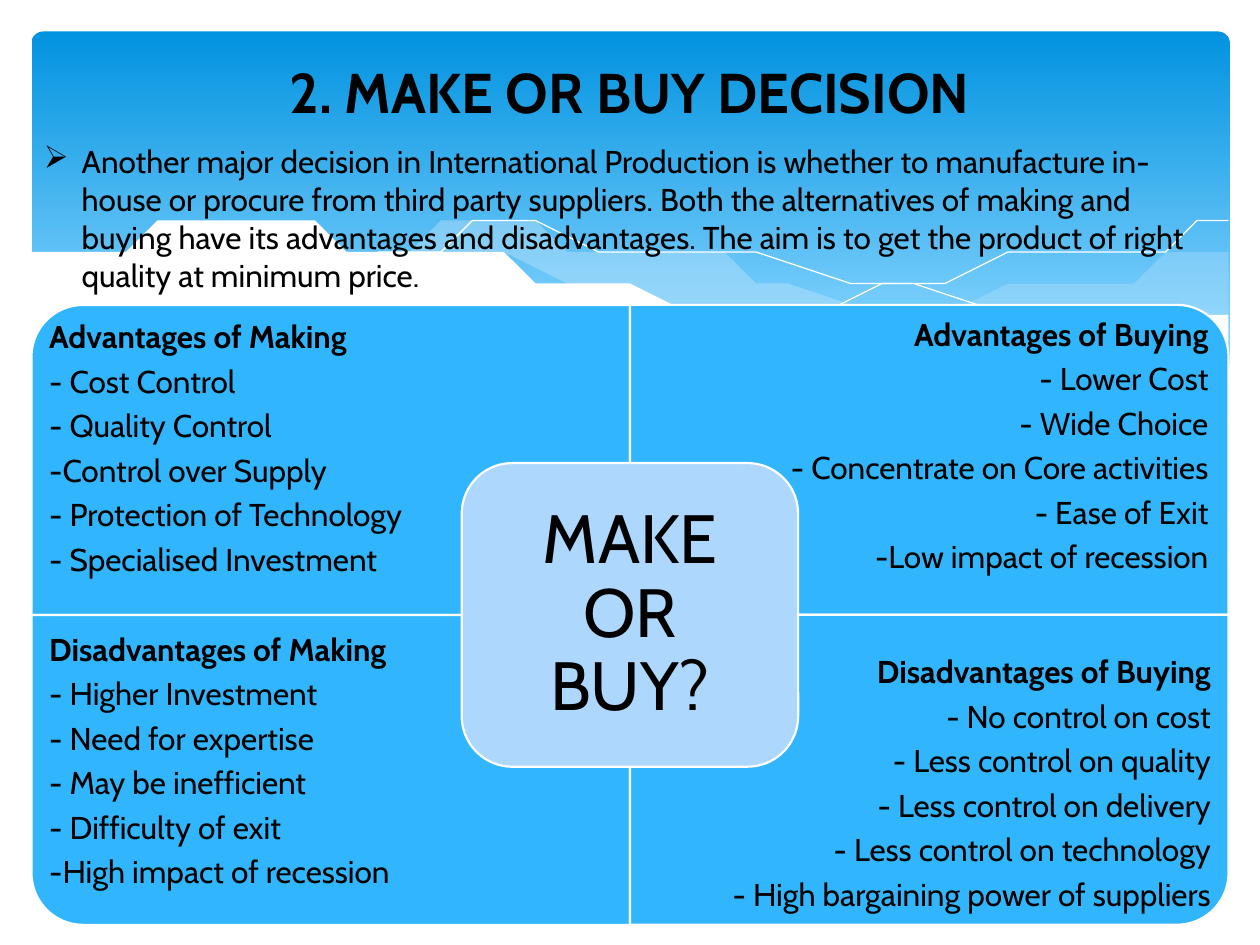
from dataclasses import dataclass
from lxml.etree import SubElement
from pptx import Presentation
from pptx.dml.color import RGBColor
from pptx.enum.shapes import MSO_SHAPE
from pptx.enum.text import MSO_ANCHOR, PP_ALIGN
from pptx.oxml.ns import qn
from pptx.util import Inches, Pt


@dataclass(frozen=True)
class Theme:
    font: str = "Cabin"
    ink: RGBColor = RGBColor(0, 0, 0)
    white: RGBColor = RGBColor(255, 255, 255)
    sky_top: RGBColor = RGBColor.from_string("0293E0")
    sky_low: RGBColor = RGBColor.from_string("83D3FE")
    mist: RGBColor = RGBColor.from_string("C6E7FC")
    quadrant: RGBColor = RGBColor.from_string("31B6FD")
    centre: RGBColor = RGBColor.from_string("AED7FE")
    title: int = 32
    body: int = 18
    question: int = 39
    gap: int = 6
    border: float = 1.25


theme = Theme()
prs = Presentation()
prs.slide_width, prs.slide_height = Inches(10), Inches(7.5)
s = prs.slides.add_slide(prs.slide_layouts[6])
COL = prs.slide_width // 40
ROW = prs.slide_height // 30


def box(col, row, cols, rows):
    return int(col * COL), int(row * ROW), int(cols * COL), int(rows * ROW)


def write(lines, at, size=theme.body, align=PP_ALIGN.LEFT, anchor=MSO_ANCHOR.TOP,
          bold_first=False, spacing=1.0, after=0, inset=0.4, pad=0.2, bullet=None):
    tf = s.shapes.add_textbox(*box(*at)).text_frame
    tf.word_wrap = True
    tf.vertical_anchor = anchor
    tf.margin_left = tf.margin_right = int(inset * COL)
    tf.margin_top = tf.margin_bottom = int(pad * ROW)
    for i, line in enumerate(lines):
        p = tf.paragraphs[0] if i == 0 else tf.add_paragraph()
        p.alignment, p.line_spacing, p.space_after = align, spacing, Pt(after)
        r = p.add_run()
        r.text = line
        r.font.name, r.font.size = theme.font, Pt(size)
        r.font.color.rgb = theme.ink
        r.font.bold = bold_first and i == 0
        if bullet:
            pPr = p._p.get_or_add_pPr()
            indent = int(1.2 * COL)
            pPr.set("marL", str(indent))
            pPr.set("indent", str(-indent))
            SubElement(pPr, qn("a:buChar")).set("char", bullet)


sp = s.shapes.add_shape(MSO_SHAPE.ROUNDED_RECTANGLE, *box(1, 1, 38.04, 10.8))
sp.adjustments[0] = 0.034
sp.shadow.inherit = False
sp.line.fill.background()
sp.fill.gradient()
sp.fill.gradient_angle = 270
for stop, color, position in zip(sp.fill.gradient_stops, (theme.sky_top, theme.sky_low), (0, 0.9)):
    stop.color.rgb, stop.position = color, position

right_mist = [
    (39.04, 8), (38.48, 8.08), (37.92, 8.16), (37.4, 8.28), (36.24, 8.52), (35.04, 8.8),
    (34.44, 8.92), (32.2, 9.48), (30.12, 9.92), (28.24, 10.28), (26.44, 10.6), (28.76, 10.88),
    (30.76, 11.08), (32.56, 11.12), (34.16, 11.04), (35.56, 10.88), (36.84, 10.6),
    (37.96, 10.28), (39.04, 9.88)]
middle_mist = [
    (35.72, 10.92), (33.48, 10.6), (31, 10.16), (28.24, 9.6), (25.16, 8.88), (23.92, 8.56),
    (22.76, 8.32), (21.64, 8.12), (20.56, 7.92), (19.56, 7.76), (18.6, 7.64), (17.68, 7.56),
    (16.8, 7.48), (15.2, 7.4), (13.76, 7.44), (12.52, 7.52), (11.44, 7.64), (12.92, 7.84),
    (14.48, 8.12), (16.16, 8.44), (17.96, 8.88), (21.2, 9.6), (24.04, 10.2), (26.6, 10.64),
    (28.88, 10.96), (30.92, 11.08), (32.72, 11.12), (34.28, 11.08), (35.72, 10.92)]
falling_line = [
    (12.36, 7.8), (13.12, 7.68), (14.12, 7.56), (15.48, 7.48), (17.32, 7.48), (18.76, 7.56),
    (20.4, 7.68), (22.24, 7.88), (24.32, 8.16), (26.6, 8.52), (29.08, 9.04), (31.8, 9.64),
    (34.76, 10.44), (36.28, 10.88)]
rising_line = [
    (24.52, 10.28), (26.12, 9.84), (27.8, 9.4), (29.92, 8.92), (32.24, 8.4), (34.64, 7.96),
    (35.8, 7.76), (36.96, 7.6), (38.04, 7.48), (39, 7.4)]
white_wave = [
    (39.08, 9.84), (37.6, 10.36), (35.96, 10.76), (34, 11), (31.72, 11.08), (29.04, 10.88),
    (25.92, 10.48), (24.12, 10.16), (22.2, 9.8), (20.12, 9.32), (17.88, 8.8), (16.72, 8.52),
    (15.64, 8.28), (14.6, 8.08), (13.6, 7.88), (12.64, 7.76), (11.68, 7.6), (10.84, 7.52),
    (10, 7.44), (9.2, 7.4), (8.44, 7.36), (7.08, 7.36), (5.84, 7.4), (4.76, 7.48),
    (3.8, 7.64), (3.04, 7.8), (2.36, 7.96), (1.84, 8.12), (1.44, 8.28), (0.92, 8.52),
    (0.92, 13.16), (39.08, 13.16)]
waves = [
    (right_mist, theme.mist, 29), (middle_mist, theme.mist, 40), (falling_line, None, 100),
    (rising_line, None, 100), (white_wave, theme.white, 100)]
for points, color, opacity in waves:
    builder = s.shapes.build_freeform(*points[0], scale=COL)
    builder.add_line_segments(points[1:], close=color is not None)
    sp = builder.convert_to_shape()
    sp.shadow.inherit = False
    if color is None:
        sp.fill.background()
        sp.line.color.rgb, sp.line.width = theme.white, Pt(0)
        continue
    sp.line.fill.background()
    sp.fill.solid()
    sp.fill.fore_color.rgb = color
    if opacity < 100:
        srgb = sp._element.spPr.find(qn("a:solidFill")).find(qn("a:srgbClr"))
        SubElement(srgb, qn("a:alpha")).set("val", str(opacity * 1000))

write(["Another major decision in International Production is whether to manufacture in-house "
       "or procure from third party suppliers. Both the alternatives of making and buying have "
       "its advantages and disadvantages. The aim is to get the product of right quality at "
       "minimum price."], (1, 4.32, 38, 5.2), bullet="➢")
write(["2. MAKE OR BUY DECISION"], (2, 1.48, 36, 2.84), size=theme.title,
      align=PP_ALIGN.CENTER, anchor=MSO_ANCHOR.MIDDLE, bold_first=True)

LEFT, TOP, WIDE, HIGH = 1, 9.68, 19, 9.84
quadrants = [
    (0, 0, 270, 10.2, 0.56, ["Advantages of Making", "- Cost Control", "- Quality Control",
                             "-Control over Supply", "- Protection of Technology",
                             "- Specialised Investment"]),
    (1, 0, 0, 10.12, 0.64, ["Advantages of Buying", "- Lower Cost", "- Wide Choice",
                            "- Concentrate on Core activities", "- Ease of Exit",
                            "-Low impact of recession"]),
    (0, 1, 180, 20.12, 0.56, ["Disadvantages of Making", "- Higher Investment",
                              "- Need for expertise", "- May be inefficient",
                              "- Difficulty of exit", "-High impact of recession"]),
    (1, 1, 90, 20.84, 0.56, ["Disadvantages of Buying", "- No control on cost",
                             "- Less control on quality", "- Less control on delivery",
                             "- Less control on technology",
                             "- High bargaining power of suppliers"])]
panels = []
for col, row, turn, text_top, inset, lines in quadrants:
    x, y = LEFT + col * WIDE, TOP + row * HIGH
    w, h = (HIGH, WIDE) if turn in (90, 270) else (WIDE, HIGH)
    sp = s.shapes.add_shape(MSO_SHAPE.ROUND_1_RECTANGLE,
                            *box(x + (WIDE - w) / 2, y + (HIGH - h) / 2, w, h))
    sp.rotation = turn
    panels.append((sp, theme.quadrant))
    write(lines, (x, text_top, WIDE, 8.6), bold_first=True, spacing=0.9, after=theme.gap,
          align=PP_ALIGN.RIGHT if col else PP_ALIGN.LEFT, inset=inset, pad=0)

sp = s.shapes.add_shape(MSO_SHAPE.ROUNDED_RECTANGLE, *box(14.66, 14.7, 10.68, 9.64))
panels.append((sp, theme.centre))
for sp, color in panels:
    sp.shadow.inherit = False
    sp.fill.solid()
    sp.fill.fore_color.rgb = color
    sp.line.color.rgb, sp.line.width = theme.white, Pt(theme.border)
write(["MAKE OR BUY?"], (15.14, 15.16, 9.72, 8.72), size=theme.question, align=PP_ALIGN.CENTER,
      anchor=MSO_ANCHOR.MIDDLE, spacing=0.9, inset=0.8)

prs.save("out.pptx")
